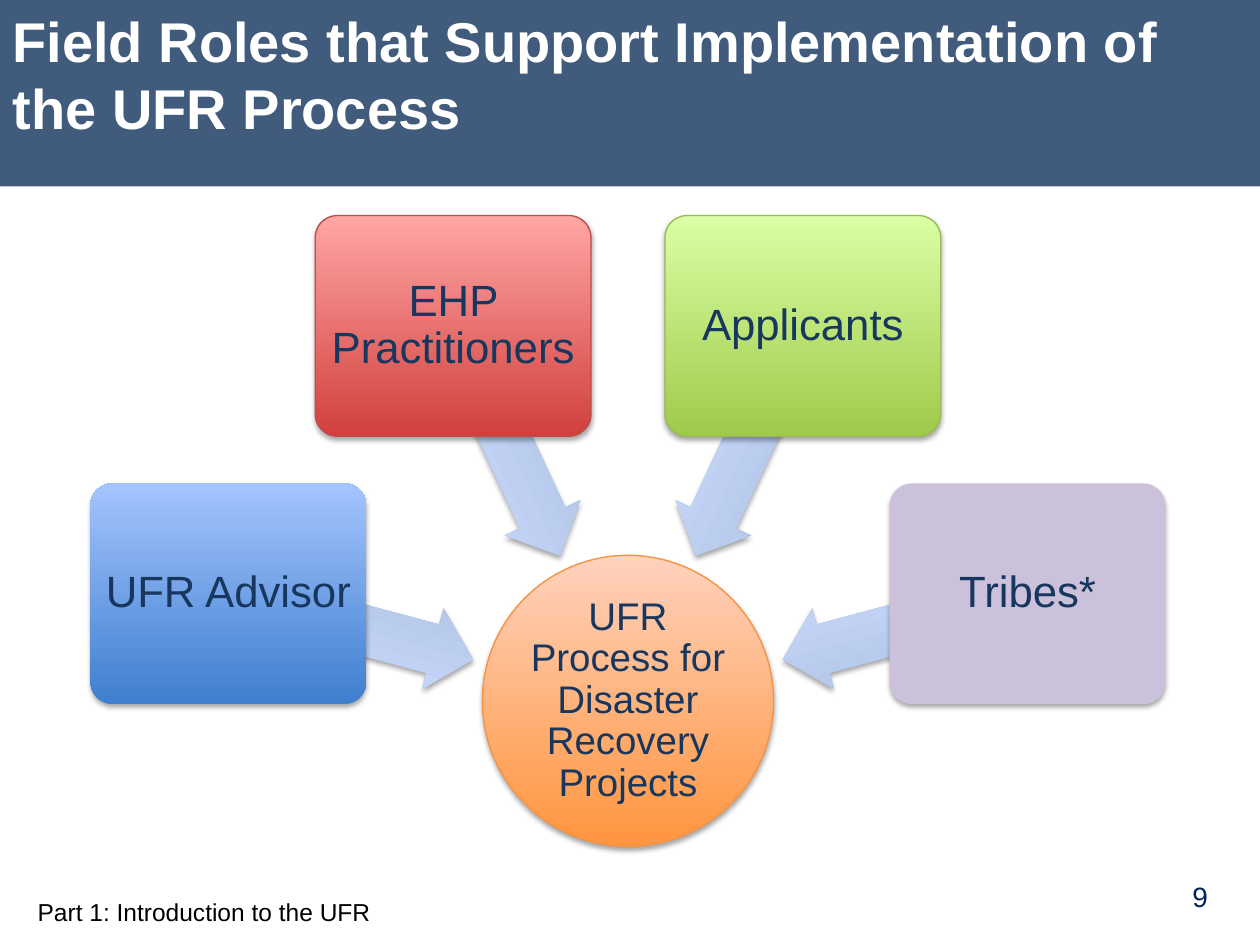
from math import cos, radians, sin

from lxml.etree import SubElement
from pptx import Presentation
from pptx.dml.color import RGBColor
from pptx.enum.shapes import MSO_SHAPE
from pptx.enum.text import MSO_ANCHOR, PP_ALIGN
from pptx.oxml.ns import qn
from pptx.util import Cm, Pt

TITLE = "Field Roles that Support Implementation of the UFR Process"
HUB = "UFR Process for Disaster Recovery Projects"
FOOTER = "Part 1: Introduction to the UFR"
PAGE = "9"
NAVY = "17375E"
# label, angle around the hub, fill (bottom, top) or one colour, outline
ROLES = [
    ("UFR Advisor", 195, ("3F7FCE", "A4C4FF"), None),
    ("EHP Practitioners", 245, ("D1403C", "FFA6A5"), "BF4C48"),
    ("Applicants", 295, ("A0CA4A", "DAFFA5"), "98B955"),
    ("Tribes*", 345, ("CCC1DA",), None),
]
HUB_FILL, HUB_LINE = ("FF953E", "FFD2BD"), "F69240"
ARROW_FILL = ("ADBFE1", "CCDDFF")

# Sizes in centimetres
SLIDE_W, SLIDE_H = 25.4, 19.05
BAND_H = 3.76
HUB_X, HUB_Y, HUB_D = 12.66, 14.13, 5.87
CARD_W, CARD_H, CARD_RADIUS = 5.56, 4.45, 8.34
ARROW_W, ARROW_H, ARROW_RADIUS = 5.11, 1.68, 5.79


def color(hex_code):
    return RGBColor.from_string(hex_code)


def write(shape, text, size, hex_code, align=PP_ALIGN.LEFT,
          anchor=MSO_ANCHOR.TOP, inset=None, bold=False, spacing=None):
    tf = shape.text_frame
    tf.text = text
    tf.word_wrap = True
    tf.vertical_anchor = anchor
    if inset is not None:
        tf.margin_left = tf.margin_right = Cm(inset)
        tf.margin_top = tf.margin_bottom = Cm(inset)
    p = tf.paragraphs[0]
    p.alignment = align
    p.line_spacing = spacing
    font = p.runs[0].font
    font.name, font.size, font.bold = "Arial", Pt(size), bold
    font.color.rgb = color(hex_code)


def add_soft_shadow(sp):
    sp.shadow.inherit = False
    effects = sp._element.spPr.find(qn("a:effectLst"))
    shadow = SubElement(effects, qn("a:outerShdw"), blurRad=str(Pt(3.1)),
                        dist=str(Pt(1.8)), dir="5400000", rotWithShape="0")
    rgb = SubElement(shadow, qn("a:srgbClr"), val="000000")
    SubElement(rgb, qn("a:alpha"), val="35000")


def add_centred(s, kind, x, y, w, h, fill, line=None):
    """Add a shadowed shape with its middle at x, y."""
    sp = s.shapes.add_shape(kind, Cm(x - w / 2), Cm(y - h / 2), Cm(w), Cm(h))
    if len(fill) == 1:
        sp.fill.solid()
        sp.fill.fore_color.rgb = color(fill[0])
    else:
        sp.fill.gradient()
        sp.fill.gradient_angle = 90
        for stop, hex_code in zip(sp.fill.gradient_stops, fill):
            stop.color.rgb = color(hex_code)
    if line:
        sp.line.color.rgb = color(line)
        sp.line.width = Pt(0.75)
    else:
        sp.line.fill.background()
    add_soft_shadow(sp)
    return sp


def around_hub(angle, radius):
    return (HUB_X + radius * cos(radians(angle)),
            HUB_Y + radius * sin(radians(angle)))


def add_header(s):
    band = s.shapes.add_shape(MSO_SHAPE.RECTANGLE, 0, 0, Cm(SLIDE_W), Cm(BAND_H))
    band.shadow.inherit = False
    band.line.fill.background()
    band.fill.solid()
    band.fill.fore_color.rgb = color(NAVY)
    rgb = band._element.spPr.find(qn("a:solidFill"))[0]
    SubElement(rgb, qn("a:alpha"), val="82000")
    title = s.shapes.title
    title.left, title.top, title.width, title.height = 0, 0, Cm(SLIDE_W), Cm(BAND_H)
    write(title, TITLE, 32, "FFFFFF", bold=True)
    title._element.addprevious(band._element)


def add_diagram(s):
    hub = add_centred(s, MSO_SHAPE.OVAL, HUB_X, HUB_Y, HUB_D, HUB_D,
                      HUB_FILL, HUB_LINE)
    write(hub, HUB, 22, NAVY, PP_ALIGN.CENTER, MSO_ANCHOR.MIDDLE, 0.05, spacing=0.9)
    for label, angle, fill, line in ROLES:
        arrow = add_centred(s, MSO_SHAPE.LEFT_ARROW, *around_hub(angle, ARROW_RADIUS),
                            ARROW_W, ARROW_H, ARROW_FILL)
        arrow.adjustments[0] = 0.6
        arrow.rotation = angle
        card = add_centred(s, MSO_SHAPE.ROUNDED_RECTANGLE,
                           *around_hub(angle, CARD_RADIUS), CARD_W, CARD_H, fill, line)
        card.adjustments[0] = 0.1
        write(card, label, 25, NAVY, PP_ALIGN.CENTER, MSO_ANCHOR.MIDDLE, 0.12,
              spacing=0.9)


def add_footer(s):
    number = s.shapes.add_textbox(Cm(16.2), Cm(17.6), Cm(8.15), Cm(0.94))
    write(number, PAGE, 16, "002360", PP_ALIGN.RIGHT, MSO_ANCHOR.BOTTOM)
    number.text_frame.margin_left = number.text_frame.margin_right = 0
    footer = s.shapes.add_textbox(Cm(0.51), Cm(17.96), Cm(16.94), Cm(0.86))
    write(footer, FOOTER, 14, "000000")


def main():
    prs = Presentation()
    prs.slide_width, prs.slide_height = Cm(SLIDE_W), Cm(SLIDE_H)
    s = prs.slides.add_slide(prs.slide_layouts[5])
    add_header(s)
    add_diagram(s)
    add_footer(s)
    prs.save("out.pptx")


if __name__ == "__main__":
    main()
